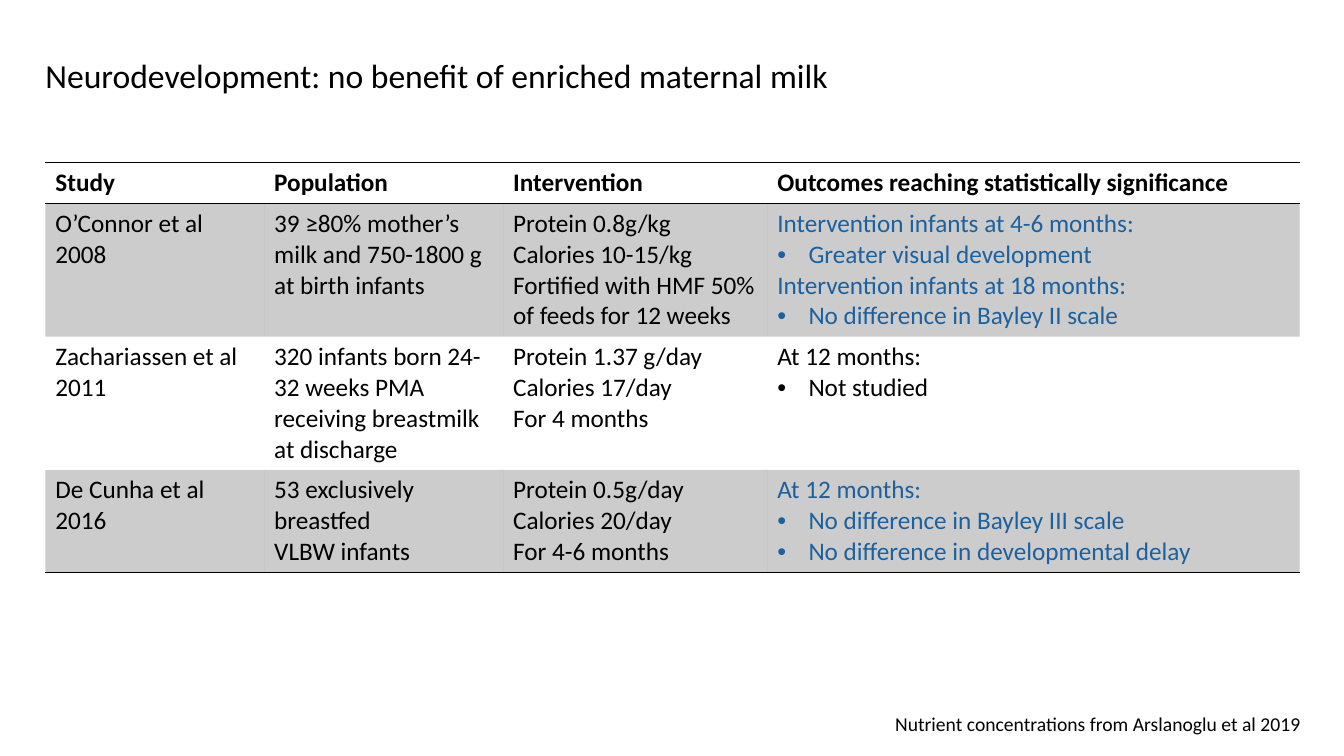
from lxml import etree
from pptx import Presentation
from pptx.dml.color import RGBColor
from pptx.enum.text import MSO_ANCHOR, MSO_AUTO_SIZE, PP_ALIGN
from pptx.oxml.ns import qn
from pptx.util import Inches, Pt

LEFT = PP_ALIGN.LEFT
MIDDLE = MSO_ANCHOR.MIDDLE
NO_AUTOFIT = MSO_AUTO_SIZE.NONE
TITLE_ONLY = 5
FONT = "Calibri"
COLORS = {"ink": "000000", "finding": "1C619E"}
PLAIN_STYLE = "{2D5ABB26-0587-4C30-8999-92F81FD0307C}"
BAND_ALPHA = 20
BULLET = "• "
BULLET_INDENT = Inches(0.31)
COLUMN_WIDTHS = [2.17, 2.37, 2.62, 5.28]
ROW_HEIGHTS = [0.41, 1.3, 1.3, 1.01]

STUDIES = [
    [["Study"], ["Population"], ["Intervention"],
     ["Outcomes reaching statistically significance"]],
    [["O’Connor et al", "2008"],
     ["39 ≥80% mother’s milk and 750-1800 g at birth infants"],
     ["Protein 0.8g/kg", "Calories 10-15/kg",
      "Fortified with HMF 50% of feeds for 12 weeks"],
     ["Intervention infants at 4-6 months:", "• Greater visual development",
      "Intervention infants at 18 months:", "• No difference in Bayley II scale"]],
    [["Zachariassen et al 2011"],
     ["320 infants born 24-32 weeks PMA receiving breastmilk at discharge"],
     ["Protein 1.37 g/day", "Calories 17/day", "For 4 months"],
     ["At 12 months:", "• Not studied"]],
    [["De Cunha et al", "2016"],
     ["53 exclusively breastfed", "VLBW infants"],
     ["Protein 0.5g/day", "Calories 20/day", "For 4-6 months"],
     ["At 12 months:", "• No difference in Bayley III scale",
      "• No difference in developmental delay"]],
]


def add_text(paragraph, text, size, color="ink", bold=False):
    """Add one formatted run to a left-aligned paragraph."""
    paragraph.alignment = LEFT
    run = paragraph.add_run()
    run.text = text
    run.font.name = FONT
    run.font.size = Pt(size)
    run.font.bold = bold
    run.font.color.rgb = RGBColor.from_string(COLORS[color])


def add_bullet(paragraph):
    """Give a paragraph a hanging bullet."""
    properties = paragraph._p.get_or_add_pPr()
    properties.set("marL", str(BULLET_INDENT))
    properties.set("indent", str(-BULLET_INDENT))
    etree.SubElement(properties, qn("a:buFont"), typeface="Arial")
    etree.SubElement(properties, qn("a:buChar"), char=BULLET.strip())


def add_rule(cell, side):
    """Draw a one-point rule on a side of a cell."""
    line = etree.SubElement(cell._tc.get_or_add_tcPr(), qn(side), w=str(Pt(1)))
    fill = etree.SubElement(line, qn("a:solidFill"))
    etree.SubElement(fill, qn("a:srgbClr"), val=COLORS["ink"])


def shade(cell, banded):
    """Fill a cell with translucent ink, or leave it clear."""
    if not banded:
        cell.fill.background()
        return
    cell.fill.solid()
    cell.fill.fore_color.rgb = RGBColor.from_string(COLORS["ink"])
    ink = cell._tc.tcPr.find(qn("a:solidFill")).find(qn("a:srgbClr"))
    etree.SubElement(ink, qn("a:alpha"), val=str(BAND_ALPHA * 1000))


def fill_cell(cell, lines, color, bold):
    """Write a cell's lines as paragraphs, bulleting the marked ones."""
    frame = cell.text_frame
    for index, line in enumerate(lines):
        paragraph = frame.add_paragraph() if index else frame.paragraphs[0]
        if line.startswith(BULLET):
            add_bullet(paragraph)
        add_text(paragraph, line.removeprefix(BULLET), 18, color, bold)


def add_heading(slide, left, top, width, height):
    """Place the slide title."""
    heading = slide.shapes.title
    heading.left, heading.top = Inches(left), Inches(top)
    heading.width, heading.height = Inches(width), Inches(height)
    frame = heading.text_frame
    frame.word_wrap = False
    frame.auto_size = NO_AUTOFIT
    frame.vertical_anchor = MIDDLE
    add_text(frame.paragraphs[0],
             "Neurodevelopment: no benefit of enriched maternal milk", 24)


def add_studies(slide, left, top):
    """Place the table of studies with its banded rows and rules."""
    table = slide.shapes.add_table(
        len(STUDIES), len(COLUMN_WIDTHS), Inches(left), Inches(top),
        Inches(sum(COLUMN_WIDTHS)), Inches(sum(ROW_HEIGHTS))).table
    table.horz_banding = False
    table._tbl.tblPr.find(qn("a:tableStyleId")).text = PLAIN_STYLE
    for column, width in zip(table.columns, COLUMN_WIDTHS):
        column.width = Inches(width)
    last_row, last_column = len(STUDIES) - 1, len(COLUMN_WIDTHS) - 1
    for row, study in enumerate(STUDIES):
        table.rows[row].height = Inches(ROW_HEIGHTS[row])
        banded = row % 2 == 1
        for column, lines in enumerate(study):
            cell = table.cell(row, column)
            if row == 0:
                add_rule(cell, "a:lnT")
            if row in (0, last_row):
                add_rule(cell, "a:lnB")
            shade(cell, banded)
            color = "finding" if banded and column == last_column else "ink"
            fill_cell(cell, lines, color, bold=row == 0)


def add_credit(slide, left, top, width, height):
    """Place the data source line."""
    credit = slide.shapes.add_textbox(
        Inches(left), Inches(top), Inches(width), Inches(height))
    credit.text_frame.word_wrap = False
    add_text(credit.text_frame.paragraphs[0],
             "Nutrient concentrations from Arslanoglu et al 2019", 14)


def main():
    """Build and save the slide."""
    deck = Presentation()
    deck.slide_width, deck.slide_height = Inches(13.33), Inches(7.5)
    slide = deck.slides.add_slide(deck.slide_layouts[TITLE_ONLY])
    add_heading(slide, 0.35, 0.49, 8.04, 0.5)
    add_studies(slide, 0.45, 1.61)
    add_credit(slide, 8.78, 7.01, 4.26, 0.34)
    deck.save("out.pptx")


if __name__ == "__main__":
    main()
